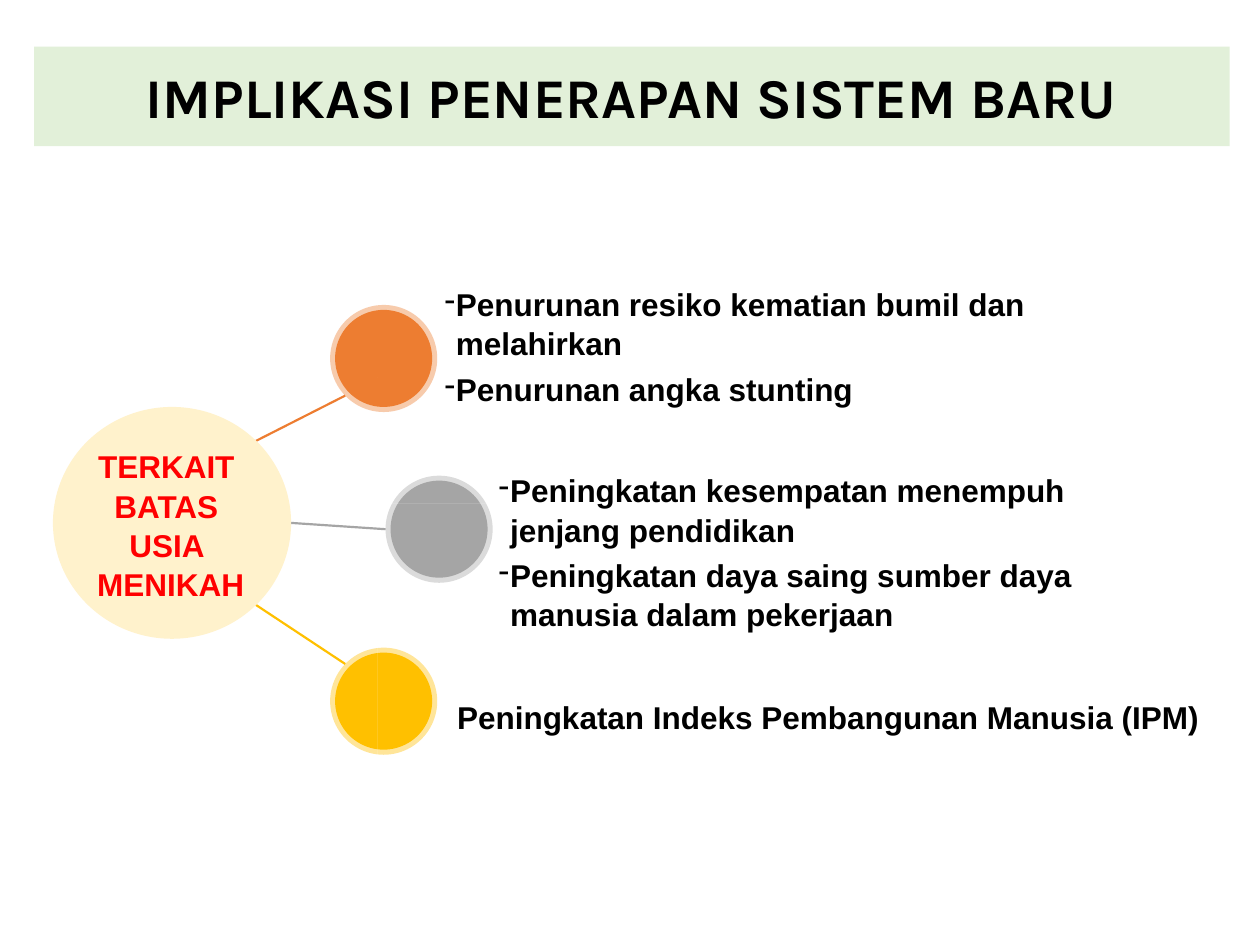
from math import cos, pi, sin

from lxml import etree
from pptx import Presentation
from pptx.dml.color import RGBColor
from pptx.enum.shapes import MSO_CONNECTOR, MSO_SHAPE
from pptx.enum.text import MSO_ANCHOR, MSO_AUTO_SIZE, PP_ALIGN
from pptx.oxml.ns import qn
from pptx.util import Inches, Pt

RECTANGLE, ELLIPSE = MSO_SHAPE.RECTANGLE, MSO_SHAPE.OVAL
STRAIGHT = MSO_CONNECTOR.STRAIGHT
MIDDLE, CENTER = MSO_ANCHOR.MIDDLE, PP_ALIGN.CENTER
GROW = MSO_AUTO_SIZE.SHAPE_TO_FIT_TEXT

BLACK = RGBColor(0x00, 0x00, 0x00)
WHITE = RGBColor(0xFF, 0xFF, 0xFF)
RED = RGBColor(0xFF, 0x00, 0x00)
MINT = RGBColor(0xE2, 0xF0, 0xD9)
CREAM = RGBColor(0xFF, 0xF2, 0xCC)
ORANGE = RGBColor(0xED, 0x7D, 0x31)
GRAY = RGBColor(0xA5, 0xA5, 0xA5)
GOLD = RGBColor(0xFF, 0xC0, 0x00)

TITLE_FONT = {"name": "Karla", "size": Pt(32), "bold": True}
BODY_FONT = {"name": "Arial", "size": Pt(18), "bold": True}
BODY_PARA = {"line_spacing": 1.04, "space_before": Pt(3.6)}
TOPIC_PARA = {"line_spacing": 1.04, "alignment": CENTER}

HALO_SIZE, DISC_SIZE = 0.85, 0.77

# Centre of the disc, colour, line start at the disc, line end at the topic
BRANCHES = [
    ((3.045, 2.845), ORANGE, (2.74, 3.14), (2.03, 3.5)),
    ((3.485, 4.2), GRAY, (3.06, 4.2), (2.31, 4.15)),
    ((3.045, 5.565), GOLD, (2.74, 5.27), (2.03, 4.8)),
]

MEGAPHONE = [
    [(2.93, 2.86), (2.99, 2.86), (2.99, 2.89), (3.02, 2.99), (3.01, 3.01),
     (2.99, 3.01), (2.98, 3), (2.95, 2.9)],
    [(3.2, 2.77), (3.22, 2.78), (3.23, 2.8), (3.22, 2.83), (3.2, 2.84)],
    [(2.92, 2.75), (2.99, 2.75), (2.99, 2.85), (2.92, 2.85), (2.9, 2.84), (2.9, 2.76)],
    [(3.14, 2.71), (3.14, 2.89), (3, 2.85), (3, 2.75)],
    [(3.15, 2.7), (3.18, 2.7), (3.18, 2.9), (3.15, 2.9)],
]


def set_values(target, values):
    for name, value in values.items():
        setattr(target, name, value)


def paint(shape, color, opacity=100):
    """Give a flat fill, in percent of opacity, with no line or shadow."""
    shape.shadow.inherit = False
    shape.fill.solid()
    shape.fill.fore_color.rgb = color
    shape.line.fill.background()
    if opacity < 100:
        color_node = shape.fill._xPr.find(".//" + qn("a:srgbClr"))
        etree.SubElement(color_node, qn("a:alpha"), val=str(opacity * 1000))


def add_ellipse(page, center, width, height, color, opacity=100):
    left, top = center[0] - width / 2, center[1] - height / 2
    shape = page.shapes.add_shape(
        ELLIPSE, Inches(left), Inches(top), Inches(width), Inches(height))
    paint(shape, color, opacity)


def add_line(page, start, end, color):
    line = page.shapes.add_connector(STRAIGHT, *map(Inches, start + end))
    line.line.color.rgb = color
    line.line.width = Pt(1.25)
    etree.SubElement(line._element.spPr, qn("a:effectLst"))


def add_icon(page, contours):
    """Draw closed contours as one white shape; nested contours make holes."""
    first, *others = contours
    builder = page.shapes.build_freeform(*first[0], scale=Inches(1))
    builder.add_line_segments(first[1:])
    for contour in others:
        builder.move_to(*contour[0])
        builder.add_line_segments(contour[1:])
    paint(builder.convert_to_shape(), WHITE)


def rectangle(left, top, right, bottom):
    return [(left, top), (right, top), (right, bottom), (left, bottom)]


def polar(center, radius, angle):
    """Point at an angle in degrees, clockwise from the top."""
    turn = angle * pi / 180
    return center[0] + radius * sin(turn), center[1] - radius * cos(turn)


def circle(center, radius):
    return [polar(center, radius, angle) for angle in range(0, 360, 10)]


def gear(center, teeth=8, tilt=15):
    tooth = [(-12, 0.125), (-9, 0.16), (9, 0.16), (12, 0.125)]
    outline = [polar(center, radius, tilt + number * 360 / teeth + offset)
               for number in range(teeth) for offset, radius in tooth]
    return [outline] + [circle(center, radius) for radius in (0.11, 0.1, 0.06)]


def landscape():
    return [
        rectangle(2.88, 5.48, 3.21, 5.69),
        rectangle(2.9, 5.5, 3.19, 5.68),
        [(3, 5.51), (3.07, 5.63), (3.11, 5.57), (3.17, 5.66), (2.92, 5.66)],
        circle((3.075, 5.545), 0.02),
    ]


def write(frame, lines, font, color, para_values, dashed=False):
    frame.word_wrap = True
    for index, text in enumerate(lines):
        para = frame.paragraphs[0] if index == 0 else frame.add_paragraph()
        set_values(para, para_values)
        span = para.add_run()
        span.text = text
        set_values(span.font, font)
        span.font.color.rgb = color
        if dashed:
            add_dash(para)


def add_dash(para):
    properties = para._p.get_or_add_pPr()
    indent = Inches(0.09)
    properties.set("marL", str(indent))
    properties.set("indent", str(-indent))
    etree.SubElement(properties, qn("a:buChar"), char="-")


def add_text(page, area, lines, color=BLACK, para_values=BODY_PARA, dashed=False):
    box = page.shapes.add_textbox(*map(Inches, area))
    write(box.text_frame, lines, BODY_FONT, color, para_values, dashed)
    return box


def add_title(page, text):
    banner = page.shapes.add_shape(RECTANGLE, *map(Inches, (0.27, 0.37, 9.49, 0.79)))
    paint(banner, MINT)
    banner.text_frame.vertical_anchor = MIDDLE
    write(banner.text_frame, [text], TITLE_FONT, BLACK, {"alignment": CENTER})


def main():
    deck = Presentation()
    deck.slide_width, deck.slide_height = Inches(10), Inches(7.5)
    page = deck.slides.add_slide(deck.slide_layouts[6])

    add_title(page, "IMPLIKASI PENERAPAN SISTEM BARU")
    for center, color, start, end in BRANCHES:
        add_ellipse(page, center, HALO_SIZE, HALO_SIZE, color, opacity=40)
        add_ellipse(page, center, DISC_SIZE, DISC_SIZE, color)
        add_line(page, start, end, color)
    for width, height in ((1.89, 1.84), (1.64, 1.59)):
        add_ellipse(page, (1.365, 4.15), width, height, CREAM)

    for icon in (MEGAPHONE, landscape(), gear((3.485, 4.205))):
        add_icon(page, icon)

    add_text(page, (3.43, 2.2, 6.16, 1.33), [
        "Penurunan resiko kematian bumil dan melahirkan",
        "Penurunan angka stunting",
    ], dashed=True)
    add_text(page, (3.86, 3.68, 5.24, 1.43), [
        "Peningkatan kesempatan menempuh jenjang pendidikan",
        "Peningkatan daya saing sumber daya manusia dalam pekerjaan",
    ], dashed=True)
    add_text(page, (3.53, 5.48, 6.47, 0.85),
             ["Peningkatan Indeks Pembangunan Manusia (IPM)"])
    topic = add_text(page, (0.63, 3.49, 1.45, 1.34),
                     ["TERKAIT ", "BATAS ", "USIA ", "MENIKAH"], RED, TOPIC_PARA)
    topic.text_frame.auto_size = GROW

    deck.save("out.pptx")


if __name__ == "__main__":
    main()
